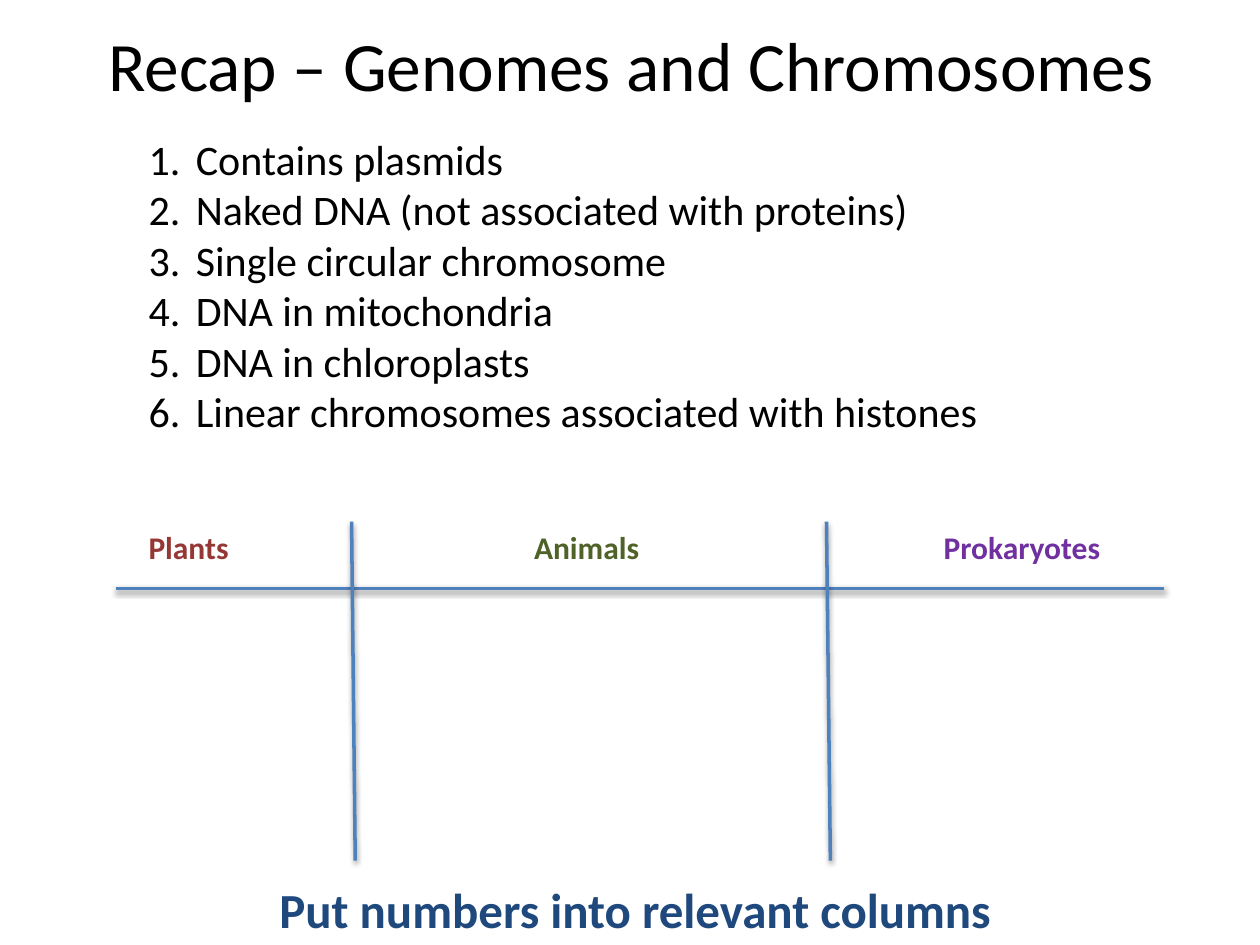
from lxml.etree import SubElement
from pptx import Presentation
from pptx.dml.color import RGBColor
from pptx.enum.shapes import MSO_CONNECTOR
from pptx.enum.text import MSO_ANCHOR, PP_ALIGN
from pptx.oxml import parse_xml
from pptx.oxml.ns import nsdecls, qn
from pptx.util import Pt

SHADOW = f"""<a:effectLst {nsdecls('a')}>
  <a:outerShdw blurRad="{Pt(3.1)}" dist="{Pt(1.6)}" dir="5400000" rotWithShape="0">
    <a:srgbClr val="000000"><a:alpha val="38000"/></a:srgbClr>
  </a:outerShdw>
</a:effectLst>"""


def color(hex_value):
    return RGBColor.from_string(hex_value)


def add_text(left, top, width, height, text, size, hex_value="000000", bold=False, wrap=False):
    """Add a text box, one paragraph per line of text, and return its frame."""
    box = page.shapes.add_textbox(Pt(left), Pt(top), Pt(width), Pt(height))
    frame = box.text_frame
    frame.word_wrap = wrap
    frame.text = text
    for para in frame.paragraphs:
        for span in para.runs:
            span.font.name = "Calibri"
            span.font.size = Pt(size)
            span.font.bold = bold
            span.font.color.rgb = color(hex_value)
    return frame


deck = Presentation()
deck.slide_width, deck.slide_height = Pt(720), Pt(540)
page = deck.slides.add_slide(deck.slide_layouts[6])

title = add_text(36.7, -8.6, 648, 90, "Recap – Genomes and Chromosomes", 39.6, wrap=True)
title.vertical_anchor = MSO_ANCHOR.MIDDLE
title.paragraphs[0].alignment = PP_ALIGN.CENTER

features = [
    "Contains plasmids",
    "Naked DNA (not associated with proteins)",
    "Single circular chromosome",
    "DNA in mitochondria",
    "DNA in chloroplasts",
    "Linear chromosomes associated with histones",
]
feature_list = add_text(77.8, 72.7, 547.2, 181.4, "\n".join(features), 24, wrap=True)
for para in feature_list.paragraphs:
    properties = para._p.get_or_add_pPr()
    properties.set("marL", str(Pt(27)))
    properties.set("indent", str(-Pt(27)))
    SubElement(properties, qn("a:buFont"), typeface="+mj-lt")
    SubElement(properties, qn("a:buAutoNum"), type="arabicPeriod")

headings = [
    ("Plants", 77.8, 60.5, "953735"),
    ("Animals", 298.1, 74.9, "4F6228"),
    ("Prokaryotes", 532.1, 104.4, "7030A0"),
]
for name, left, width, hex_value in headings:
    add_text(left, 298.1, width, 28.8, name, 18, hex_value, bold=True)

grid_lines = [
    (66.2, 336.2, 665.3, 336.2),
    (200.9, 298.1, 203, 491.8),
    (472.3, 298.1, 474.5, 491.8),
]
for ends in grid_lines:
    line = page.shapes.add_connector(MSO_CONNECTOR.STRAIGHT, *map(Pt, ends))
    line.line.color.rgb = color("4F81BD")
    line.line.width = Pt(2)
    line._element.spPr.append(parse_xml(SHADOW))

add_text(152.6, 499, 425.5, 41, "Put numbers into relevant columns", 28, "1F497D", bold=True)

deck.save("out.pptx")
